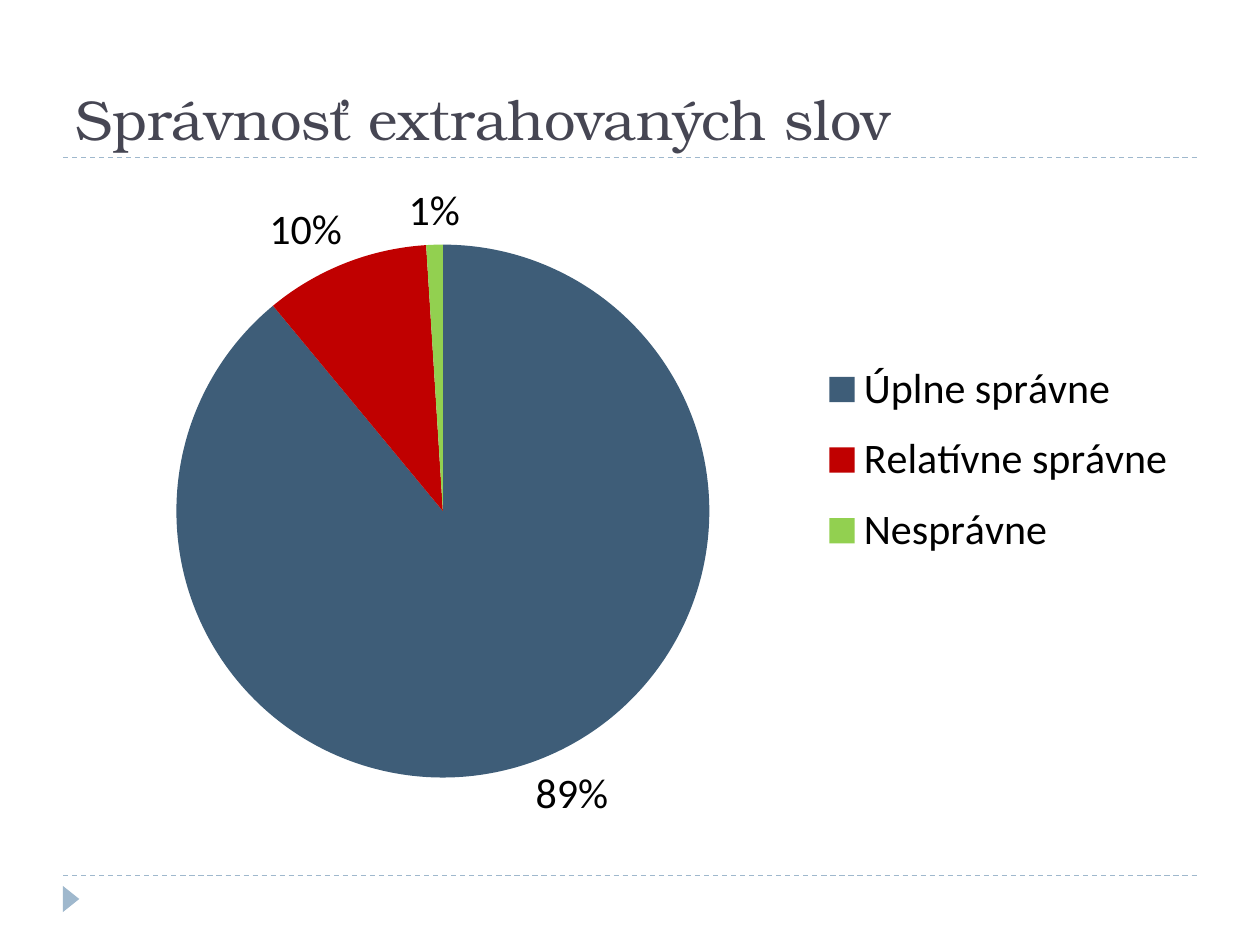
from typing import NamedTuple

from lxml import etree
from pptx import Presentation
from pptx.chart.data import CategoryChartData
from pptx.dml.color import RGBColor
from pptx.enum.chart import XL_CHART_TYPE, XL_LABEL_POSITION, XL_LEGEND_POSITION
from pptx.enum.dml import MSO_LINE
from pptx.enum.shapes import MSO_CONNECTOR, MSO_SHAPE
from pptx.enum.text import MSO_ANCHOR
from pptx.oxml.ns import qn
from pptx.util import Pt

PIE = XL_CHART_TYPE.PIE
OUTSIDE_END = XL_LABEL_POSITION.OUTSIDE_END
LEGEND_RIGHT = XL_LEGEND_POSITION.RIGHT
DASH = MSO_LINE.DASH
STRAIGHT = MSO_CONNECTOR.STRAIGHT
TRIANGLE = MSO_SHAPE.ISOSCELES_TRIANGLE
BOTTOM = MSO_ANCHOR.BOTTOM

COLORS = {
    "title": "464653",
    "accent": "9FB8CD",
    "text": "000000",
    "correct": "3E5D78",
    "relative": "C00000",
    "wrong": "92D050",
}
LEFT, WIDTH = 36, 648
RULE_HEIGHTS = (90, 500.4)


class Slice(NamedTuple):
    label: str
    percent: int
    color: str


SLICES = [
    Slice("Úplne správne", 89, "correct"),
    Slice("Relatívne správne", 10, "relative"),
    Slice("Nesprávne", 1, "wrong"),
]


def rgb(key: str) -> RGBColor:
    return RGBColor.from_string(COLORS[key])


def format_font(font, size: float, name: str, color: str) -> None:
    for attribute, value in {"size": Pt(size), "name": name}.items():
        setattr(font, attribute, value)
    font.color.rgb = rgb(color)


def draw_rule(slide, y: float) -> None:
    rule = slide.shapes.add_connector(
        STRAIGHT, Pt(LEFT), Pt(y), Pt(LEFT + WIDTH), Pt(y))
    rule.line.color.rgb = rgb("accent")
    for attribute, value in {"width": Pt(0.75), "dash_style": DASH}.items():
        setattr(rule.line, attribute, value)
    etree.SubElement(rule._element.spPr, qn("a:effectLst"))


def draw_marker(slide) -> None:
    marker = slide.shapes.add_shape(
        TRIANGLE, Pt(33.1), Pt(509), Pt(15), Pt(9.4))
    marker.rotation = 90
    marker.shadow.inherit = False
    marker.fill.solid()
    marker.fill.fore_color.rgb = rgb("accent")
    marker.line.fill.background()


def draw_title(slide, wording: str) -> None:
    title = slide.shapes.add_textbox(Pt(LEFT), Pt(12), Pt(WIDTH), Pt(78))
    frame = title.text_frame
    for attribute, value in {"word_wrap": True, "vertical_anchor": BOTTOM}.items():
        setattr(frame, attribute, value)
    run = frame.paragraphs[0].add_run()
    run.text = wording
    format_font(run.font, 32, "TeX Gyre Bonum", "title")


def set_layout(parent, before: str, **fractions: float) -> None:
    """Place a chart part by fractions of the chart area."""
    for old in parent.findall(qn("c:layout")):
        parent.remove(old)
    layout = etree.Element(qn("c:layout"))
    manual = etree.SubElement(layout, qn("c:manualLayout"))
    if before == "c:pieChart":
        etree.SubElement(manual, qn("c:layoutTarget")).set("val", "inner")
    for mode in ("xMode", "yMode"):
        etree.SubElement(manual, qn(f"c:{mode}")).set("val", "edge")
    for side, value in fractions.items():
        etree.SubElement(manual, qn(f"c:{side}")).set("val", str(value))
    parent.find(qn(before)).addprevious(layout)


def draw_pie(slide, slices: list[Slice]) -> None:
    shares = CategoryChartData()
    shares.categories = [part.label for part in slices]
    shares.add_series("Series 1", [part.percent for part in slices])
    chart = slide.shapes.add_chart(
        PIE, Pt(LEFT), Pt(95.76), Pt(WIDTH), Pt(388.8), shares).chart
    chart.has_title = False
    format_font(chart.font, 18, "Calibri", "text")

    # Slices and their percentages
    plot = chart.plots[0]
    plot.vary_by_categories = True
    for index, part in enumerate(slices):
        fill = plot.series[0].points[index].format.fill
        fill.solid()
        fill.fore_color.rgb = rgb(part.color)
    plot.has_data_labels = True
    labels = plot.data_labels
    label_format = {
        "show_percentage": True,
        "show_value": False,
        "number_format": "0%",
        "number_format_is_linked": False,
        "position": OUTSIDE_END,
    }
    for attribute, value in label_format.items():
        setattr(labels, attribute, value)
    format_font(labels.font, 24, "Calibri", "text")

    # Legend
    chart.has_legend = True
    legend = chart.legend
    for attribute, value in {"position": LEGEND_RIGHT, "include_in_layout": False}.items():
        setattr(legend, attribute, value)
    format_font(legend.font, 24, "Calibri", "text")

    plot_area = chart._chartSpace.chart.plotArea
    set_layout(plot_area, "c:pieChart", x=0.1, y=0.11, w=0.47, h=0.79)
    set_layout(legend._element, "c:overlay", x=0.66, y=0.26, w=0.33, h=0.34)


def main() -> None:
    presentation = Presentation()
    presentation.slide_width, presentation.slide_height = Pt(720), Pt(540)
    slide = presentation.slides.add_slide(presentation.slide_layouts[6])

    # Frame of the slide
    for y in RULE_HEIGHTS:
        draw_rule(slide, y)
    draw_marker(slide)

    # Content
    draw_title(slide, "Správnosť extrahovaných slov")
    draw_pie(slide, SLICES)
    presentation.save("out.pptx")


if __name__ == "__main__":
    main()
